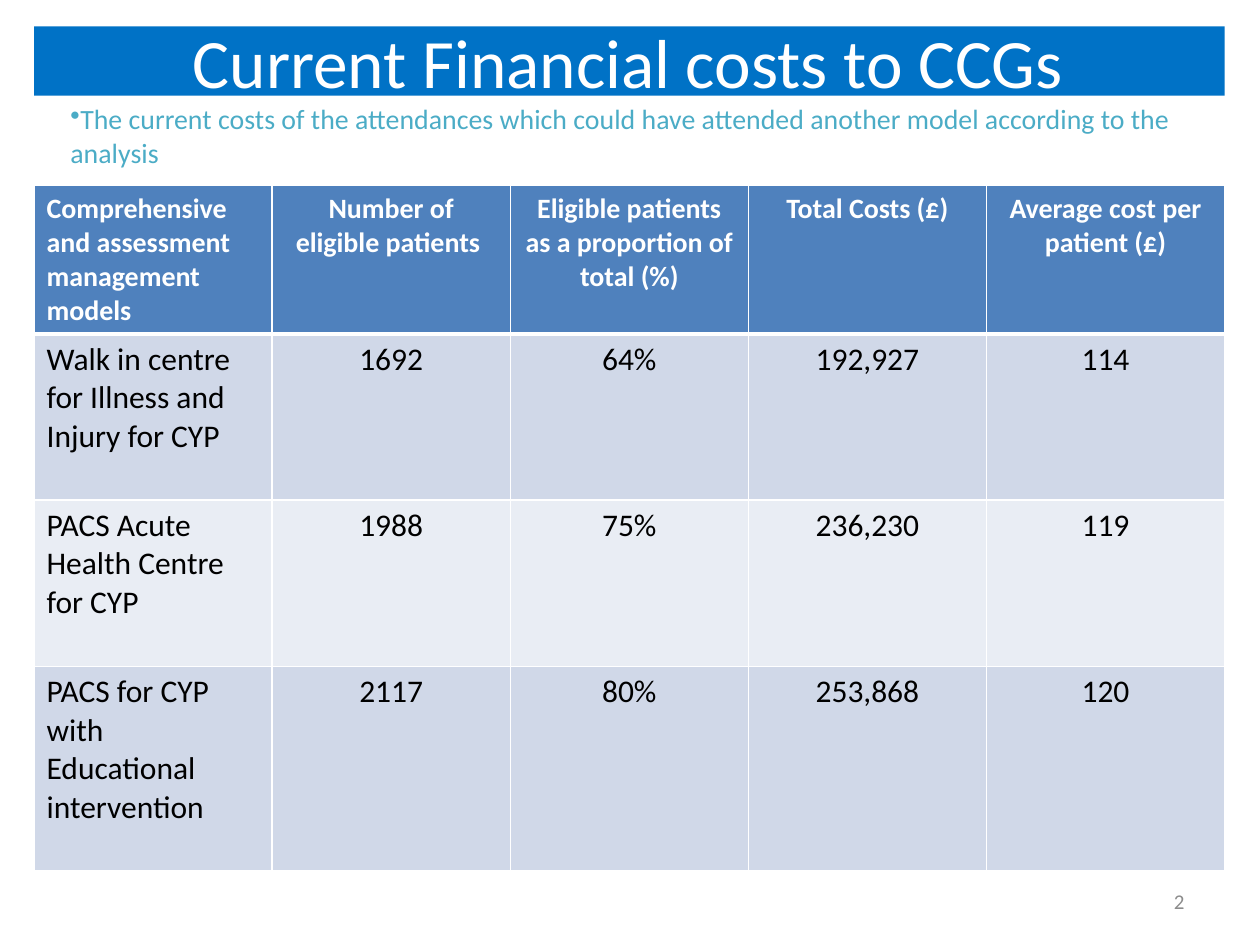
from lxml import etree
from pptx import Presentation
from pptx.dml.color import RGBColor
from pptx.enum.text import MSO_ANCHOR, MSO_AUTO_SIZE, PP_ALIGN
from pptx.oxml.ns import qn
from pptx.util import Inches, Pt

LEFT, CENTER, RIGHT = PP_ALIGN.LEFT, PP_ALIGN.CENTER, PP_ALIGN.RIGHT
TOP, MIDDLE = MSO_ANCHOR.TOP, MSO_ANCHOR.MIDDLE
NO_AUTOFIT = MSO_AUTO_SIZE.NONE
TITLE_ONLY = 5

MARGIN, CONTENT_WIDTH = 0.27, 9.45
WHITE, BLACK = "FFFFFF", "000000"
HEADER_FILL = "4F81BD"
BAND_FILLS = ("D0D8E8", "E9EDF4")
ROW_HEIGHTS = (1.18, 1.32, 1.32, 1.62)
COSTS = (
    ("Comprehensive and assessment management models", "Number of eligible patients ",
     "Eligible patients as a proportion of total (%)", "Total Costs (£)",
     "Average cost per patient (£)"),
    ("Walk in centre for Illness and Injury for CYP", "1692", "64%", "192,927", "114"),
    ("PACS Acute Health Centre for CYP", "1988", "75%", "236,230", "119"),
    ("PACS for CYP with\nEducational intervention", "2117", "80%", "253,868", "120"),
)


def color(value):
    return RGBColor.from_string(value)


class SlideBuilder:
    font = "Calibri"

    def __init__(self, presentation):
        self.slide = presentation.slides.add_slide(presentation.slide_layouts[TITLE_ONLY])

    def add_lines(self, frame, text, size, ink, align=LEFT, bold=False):
        for index, line in enumerate(text.split("\n")):
            paragraph = frame.paragraphs[0] if index == 0 else frame.add_paragraph()
            paragraph.alignment = align
            run = paragraph.add_run()
            run.text = line
            run.font.name = self.font
            run.font.size = Pt(size)
            run.font.bold = bold
            run.font.color.rgb = color(ink)

    def indent(self, paragraph, margin, bullet=None):
        properties = paragraph._p.get_or_add_pPr()
        properties.set("marL", str(Inches(margin)))
        properties.set("indent", "0")
        if bullet:
            etree.SubElement(properties, qn("a:buChar")).set("char", bullet)

    def title(self, text, top, height):
        banner = self.slide.shapes.title
        banner.left, banner.top = Inches(MARGIN), Inches(top)
        banner.width, banner.height = Inches(CONTENT_WIDTH), Inches(height)
        banner.fill.solid()
        banner.fill.fore_color.rgb = color("0072C6")
        frame = banner.text_frame
        frame.auto_size = NO_AUTOFIT
        frame.word_wrap = True
        frame.vertical_anchor = MIDDLE
        self.add_lines(frame, text, 39.6, WHITE, CENTER)
        self.indent(frame.paragraphs[0], 0.1)

    def text(self, text, left, top, width, height, size, ink, align=LEFT, anchor=TOP):
        box = self.slide.shapes.add_textbox(
            Inches(left), Inches(top), Inches(width), Inches(height))
        frame = box.text_frame
        frame.word_wrap = True
        frame.vertical_anchor = anchor
        self.add_lines(frame, text, size, ink, align)
        return frame

    def bullet(self, text, top, height):
        frame = self.text(text, MARGIN, top, CONTENT_WIDTH, height, 15.9, "4BACC6")
        paragraph = frame.paragraphs[0]
        paragraph.space_before = Pt(3)
        self.indent(paragraph, 0.19, "•")

    def borders(self, cell, bottom):
        properties = cell._tc.get_or_add_tcPr()
        widths = {"a:lnL": 1, "a:lnR": 1, "a:lnT": 1, "a:lnB": bottom}
        for position, (side, width) in enumerate(widths.items()):
            line = etree.Element(qn(side), w=str(Pt(width)))
            fill = etree.SubElement(line, qn("a:solidFill"))
            etree.SubElement(fill, qn("a:srgbClr")).set("val", WHITE)
            properties.insert(position, line)

    def table(self, rows, top, heights):
        table = self.slide.shapes.add_table(
            len(rows), len(rows[0]), Inches(MARGIN), Inches(top),
            Inches(CONTENT_WIDTH), Inches(sum(heights))).table
        for row_index, values in enumerate(rows):
            table.rows[row_index].height = Inches(heights[row_index])
            header = row_index == 0
            fill = HEADER_FILL if header else BAND_FILLS[(row_index - 1) % 2]
            for column_index, value in enumerate(values):
                cell = table.cell(row_index, column_index)
                cell.fill.solid()
                cell.fill.fore_color.rgb = color(fill)
                self.borders(cell, 3 if header else 1)
                self.add_lines(cell.text_frame, value, 16 if header else 18,
                               WHITE if header else BLACK,
                               CENTER if column_index else LEFT, header)


def main():
    presentation = Presentation()
    presentation.slide_width, presentation.slide_height = Inches(10), Inches(7.5)
    builder = SlideBuilder(presentation)
    builder.title("Current Financial costs to CCGs ", 0.21, 0.55)
    builder.bullet("The current costs of the attendances which could have attended "
                   "another model according to the analysis", 0.76, 0.63)
    builder.text("2", 7.17, 6.95, 2.33, 0.4, 12, "8C8C8C", RIGHT, MIDDLE)
    builder.table(COSTS, 1.47, ROW_HEIGHTS)
    presentation.save("out.pptx")


if __name__ == "__main__":
    main()
